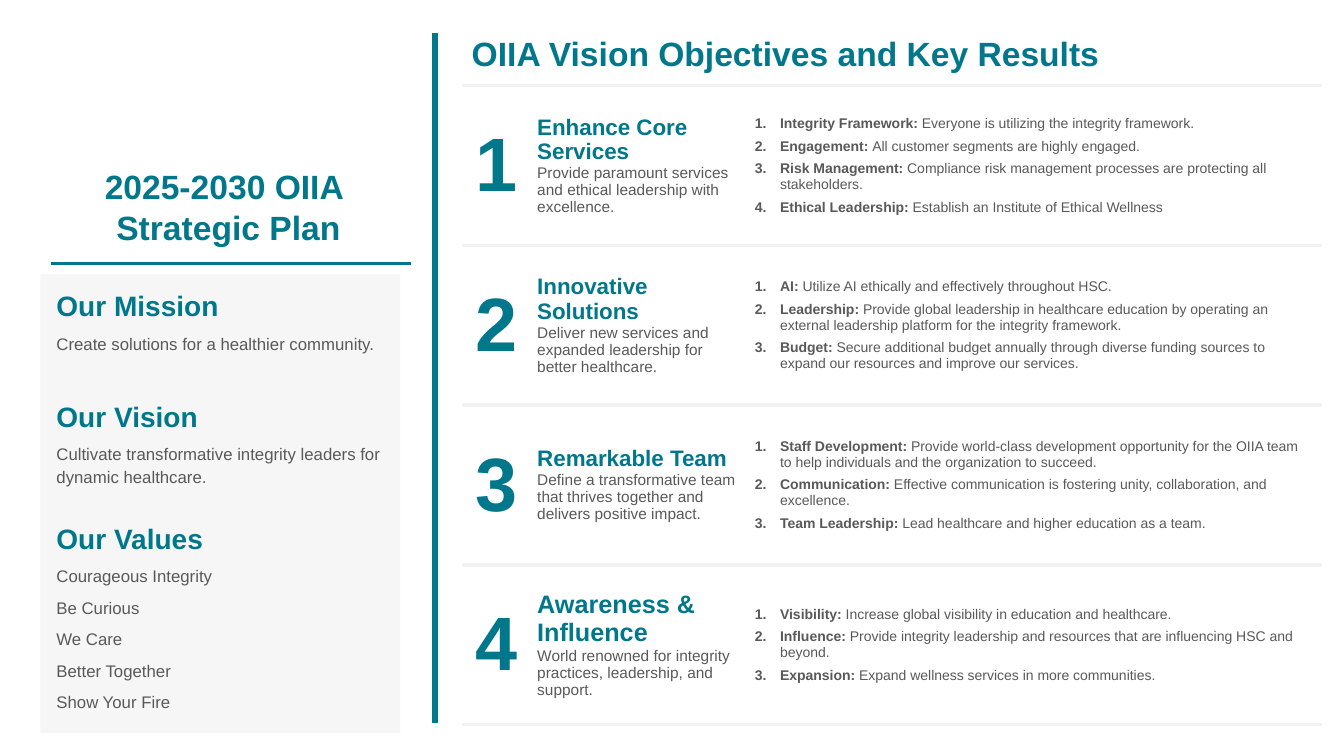
from dataclasses import dataclass

from lxml.etree import SubElement
from pptx import Presentation
from pptx.dml.color import RGBColor
from pptx.enum.shapes import MSO_CONNECTOR, MSO_SHAPE
from pptx.enum.text import MSO_ANCHOR, MSO_AUTO_SIZE, PP_ALIGN
from pptx.oxml.ns import qn
from pptx.util import Emu, Inches, Pt

TEAL = RGBColor(0x00, 0x77, 0x8B)
GREY = RGBColor(0x59, 0x59, 0x59)
PALE = RGBColor(0xF2, 0xF2, 0xF2)
FONT = "Arial"
WIDTH, HEIGHT = Inches(13.33), Inches(7.5)


@dataclass
class Area:
    """A rectangle in percent of the slide's width and height."""
    left: float
    top: float
    width: float
    height: float

    def lengths(self) -> tuple[Emu, Emu, Emu, Emu]:
        return across(self.left), down(self.top), across(self.width), down(self.height)


@dataclass
class Section:
    heading: str
    lines: list[str]
    space_after: float
    gap_above: float = 0


@dataclass
class Objective:
    name: str
    purpose: str
    results: list[tuple[str, str]]
    name_size: float = 16


SECTIONS = [
    Section("Our Mission", ["Create solutions for a healthier community."], 8),
    Section("Our Vision", ["Cultivate transformative integrity leaders for dynamic healthcare."], 0, 21),
    Section("Our Values", ["Courageous Integrity", "Be Curious", "We Care",
                           "Better Together", "Show Your Fire"], 6, 21),
]
OBJECTIVES = [
    Objective("Enhance Core Services",
              "Provide paramount services and ethical leadership with excellence.", [
                  ("Integrity Framework: ", "Everyone is utilizing the integrity framework."),
                  ("Engagement: ", "All customer segments are highly engaged."),
                  ("Risk Management: ", "Compliance risk management processes are protecting all "
                   "stakeholders."),
                  ("Ethical Leadership: ", "Establish an Institute of Ethical Wellness")]),
    Objective("Innovative Solutions",
              "Deliver new services and expanded leadership for better healthcare.", [
                  ("AI: ", "Utilize AI ethically and effectively throughout HSC."),
                  ("Leadership: ", "Provide global leadership in healthcare education by operating "
                   "an external leadership platform for the integrity framework."),
                  ("Budget: ", "Secure additional budget annually through diverse funding sources "
                   "to expand our resources and improve our services.")]),
    Objective("Remarkable Team",
              "Define a transformative team that thrives together and delivers positive impact.", [
                  ("Staff Development: ", "Provide world-class development opportunity for the OIIA "
                   "team to help individuals and the organization to succeed."),
                  ("Communication: ", "Effective communication is fostering unity, collaboration, "
                   "and excellence."),
                  ("Team Leadership: ", "Lead healthcare and higher education as a team.")]),
    Objective("Awareness & Influence",
              "World renowned for integrity practices, leadership, and support.", [
                  ("Visibility: ", "Increase global visibility in education and healthcare."),
                  ("Influence: ", "Provide integrity leadership and resources that are influencing "
                   "HSC and beyond."),
                  ("Expansion: ", "Expand wellness services in more communities.")], 18),
]
COLUMN_SHARES = [5.25, 15.82, 42.97]


def across(percent: float) -> Emu:
    return Emu(round(WIDTH * percent / 100))


def down(percent: float) -> Emu:
    return Emu(round(HEIGHT * percent / 100))


def set_all(target, **values) -> None:
    for name, value in values.items():
        setattr(target, name, value)


def place(box, area: Area) -> None:
    set_all(box, **dict(zip(("left", "top", "width", "height"), area.lengths())))


def prepare(frame) -> None:
    set_all(frame, word_wrap=True, auto_size=MSO_AUTO_SIZE.NONE, vertical_anchor=MSO_ANCHOR.TOP)


def next_para(frame, **values):
    """Return the frame's empty first paragraph, or a new one, formatted."""
    first = frame.paragraphs[0]
    para = frame.add_paragraph() if first.runs else first
    set_all(para, **values)
    return para


def add_span(para, text: str, size: float, color: RGBColor = TEAL, bold: bool = True) -> None:
    span = para.add_run()
    span.text = text
    set_all(span.font, name=FONT, size=Pt(size), bold=bold)
    span.font.color.rgb = color


def add_break(para, size: float) -> None:
    """Add a line break whose own text size does not stretch the line."""
    para.add_line_break()
    SubElement(para._p.findall(qn("a:br"))[-1], qn("a:rPr"), sz=str(round(size * 100)))


def set_marker(para, indent: Emu, tag: str, **attributes: str) -> None:
    properties = para._p.get_or_add_pPr()
    properties.set("marL", str(indent))
    properties.set("indent", str(-indent))
    SubElement(properties, qn(tag), **attributes)


def add_block(page, area: Area, color: RGBColor):
    block = page.shapes.add_shape(MSO_SHAPE.RECTANGLE, *area.lengths())
    block.shadow.inherit = False
    block.fill.solid()
    block.fill.fore_color.rgb = color
    block.line.fill.background()
    return block


def set_borders(cell) -> None:
    """Rule the top and bottom of a cell and clear its sides."""
    properties = cell._tc.get_or_add_tcPr()
    for index, side in enumerate(("lnL", "lnR", "lnT", "lnB")):
        edge = SubElement(properties, qn(f"a:{side}"), w=str(Pt(3)))
        if side in ("lnT", "lnB"):
            SubElement(SubElement(edge, qn("a:solidFill")), qn("a:srgbClr"), val=str(PALE))
        else:
            SubElement(edge, qn("a:noFill"))
        properties.insert(index, edge)


def draw_sections(page) -> None:
    body = page.placeholders[1]
    place(body, Area(3.45, 36.93, 27.75, 62.67))
    prepare(body.text_frame)
    for section in SECTIONS:
        rows = [(section.heading, section.gap_above, 6, 20, TEAL, True)]
        rows += [(line, 0, section.space_after, 12, GREY, False) for line in section.lines]
        for text, before, after, size, color, bold in rows:
            para = next_para(body.text_frame, line_spacing=1.14, space_before=Pt(before),
                             space_after=Pt(after))
            set_marker(para, Emu(0), "a:buNone")
            add_span(para, text, size, color, bold)


def draw_plan_name(page) -> None:
    box = page.shapes.add_textbox(*Area(3.6, 21.33, 26.78, 12.13).lengths())
    prepare(box.text_frame)
    para = next_para(box.text_frame, alignment=PP_ALIGN.CENTER)
    add_span(para, "2025-2030 OIIA ", 24)
    add_break(para, 24)
    add_span(para, "Strategic Plan", 24)
    rule = page.shapes.add_connector(MSO_CONNECTOR.STRAIGHT, across(3.8), down(34.8),
                                     across(30.6), down(34.8))
    rule.line.color.rgb = TEAL
    rule.line.width = Pt(2.25)
    SubElement(rule.element.spPr, qn("a:effectLst"))


def draw_objectives(page) -> None:
    area = Area(34.35, 11.33, sum(COLUMN_SHARES), 84.53)
    table = page.shapes.add_table(len(OBJECTIVES), len(COLUMN_SHARES), *area.lengths()).table
    set_all(table, first_row=False, horz_banding=False)
    for column, share in zip(table.columns, COLUMN_SHARES):
        column.width = across(share)
    for number, (row, objective) in enumerate(zip(table.rows, OBJECTIVES), 1):
        for cell in row.cells:
            cell.vertical_anchor = MSO_ANCHOR.MIDDLE
            cell.fill.background()
            set_borders(cell)
        digit, summary, results = row.cells
        add_span(next_para(digit.text_frame, alignment=PP_ALIGN.CENTER), str(number), 54)
        set_all(summary, margin_left=Inches(0.05), margin_right=Inches(0.05))
        para = next_para(summary.text_frame, space_before=Pt(3), space_after=Pt(3))
        add_span(para, objective.name, objective.name_size)
        add_break(para, objective.name_size)
        add_span(para, objective.purpose, 11, GREY, False)
        for label, detail in objective.results:
            para = next_para(results.text_frame, space_before=Pt(3), space_after=Pt(2))
            set_marker(para, Inches(0.25), "a:buAutoNum", type="arabicPeriod")
            add_span(para, label, 10, GREY)
            add_span(para, detail, 10, GREY, False)


def main() -> None:
    deck = Presentation()
    set_all(deck, slide_width=WIDTH, slide_height=HEIGHT)
    page = deck.slides.add_slide(deck.slide_layouts[1])
    title = page.shapes.title
    place(title, Area(34.35, 3.73, 50.85, 6.67))
    prepare(title.text_frame)
    add_span(next_para(title.text_frame, alignment=PP_ALIGN.LEFT),
             "OIIA Vision Objectives and Key Results", 24)
    panel = add_block(page, Area(3, 36.27, 26.78, 60.67), PALE)
    SubElement(panel.element.spPr.find(".//" + qn("a:srgbClr")), qn("a:alpha"), val="68000")
    title.element.addprevious(panel.element)
    draw_sections(page)
    draw_plan_name(page)
    draw_objectives(page)
    divider = add_block(page, Area(32.18, 4.4, 0.38, 91.2), TEAL)
    divider.line.color.rgb = TEAL
    divider.line.width = Pt(1)
    deck.save("out.pptx")


if __name__ == "__main__":
    main()
